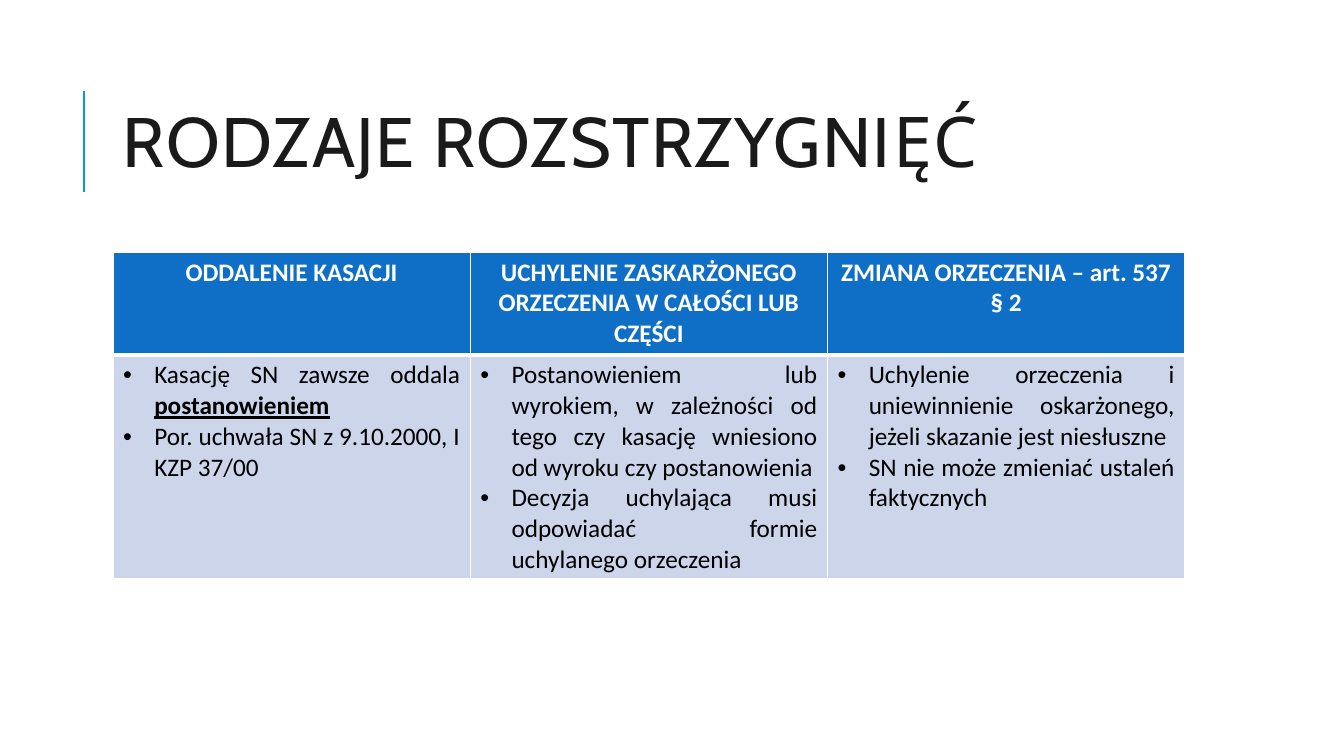
"""Build a slide with a title and a table of the kinds of cassation rulings."""
from pptx import Presentation
from pptx import util as u
from pptx.dml.color import RGBColor
from pptx.enum import shapes, text
from pptx.oxml import parse_xml
from pptx.oxml.ns import nsdecls

TITLE = "RODZAJE ROZSTRZYGNIĘĆ"
COLUMNS = [
    ("ODDALENIE KASACJI",
     [[("Kasację SN zawsze oddala ", False), ("postanowieniem", True)],
      [("Por. uchwała SN z 9.10.2000, I KZP 37/00", False)]]),
    ("UCHYLENIE ZASKARŻONEGO ORZECZENIA W CAŁOŚCI LUB CZĘŚCI",
     [[("Postanowieniem lub wyrokiem, w zależności od tego czy kasację "
        "wniesiono od wyroku czy postanowienia", False)],
      [("Decyzja uchylająca musi odpowiadać formie uchylanego orzeczenia", False)]]),
    ("ZMIANA ORZECZENIA – art. 537 § 2",
     [[("Uchylenie orzeczenia i uniewinnienie oskarżonego, jeżeli skazanie "
        "jest niesłuszne", False)],
      [("SN nie może zmieniać ustaleń faktycznych", False)]]),
]
LEFT, WIDTH = 1.12, 10.63
ROW_HEIGHTS = [1.02, 2.22]
HEADER_BORDERS = {"L": 1, "R": 1, "T": 1, "B": 3}
BODY_BORDERS = {"L": 1, "R": 1, "T": 3, "B": 1}


def color(value):
    return RGBColor.from_string(value)


def add_text(paragraph, content, size=18, font="Calibri", fill="000000",
             bold=False, underline=False, spacing=None):
    run = paragraph.add_run()
    run.text = content
    run.font.size = u.Pt(size)
    run.font.name = font
    run.font.color.rgb = color(fill)
    run.font.bold = bold
    run.font.underline = underline
    if spacing:
        run.font._element.set("spc", str(spacing * 100))


def add_bullet(paragraph):
    properties = paragraph._p.get_or_add_pPr()
    properties.set("marL", str(u.Inches(0.31)))
    properties.set("indent", str(u.Inches(-0.31)))
    properties.append(parse_xml(f'<a:buFont {nsdecls("a")} typeface="Arial"/>'))
    properties.append(parse_xml(f'<a:buChar {nsdecls("a")} char="•"/>'))


def style_cell(cell, fill, borders):
    cell.fill.solid()
    cell.fill.fore_color.rgb = color(fill)
    properties = cell._tc.get_or_add_tcPr()
    for position, (side, width) in enumerate(borders.items()):
        properties.insert(position, parse_xml(
            f'<a:ln{side} {nsdecls("a")} w="{u.Pt(width)}"><a:solidFill>'
            f'<a:srgbClr val="FFFFFF"/></a:solidFill></a:ln{side}>'))


def add_title(slide):
    line = slide.shapes.add_connector(
        shapes.MSO_CONNECTOR.STRAIGHT,
        u.Inches(0.83), u.Inches(1.9), u.Inches(0.83), u.Inches(0.9))
    line.line.color.rgb = color("009DD9")
    line.line.width = u.Pt(1.5)
    line._element.spPr.append(parse_xml(f'<a:effectLst {nsdecls("a")}/>'))

    title = slide.shapes.add_textbox(
        u.Inches(LEFT), u.Inches(0.64), u.Inches(WIDTH), u.Inches(1.64))
    frame = title.text_frame
    frame.word_wrap = True
    frame.vertical_anchor = text.MSO_ANCHOR.MIDDLE
    paragraph = frame.paragraphs[0]
    paragraph.line_spacing = 0.8
    add_text(paragraph, TITLE, size=50, font="Cabin", fill="1A1A1A", spacing=1)


def add_rulings(slide):
    table = slide.shapes.add_table(
        len(ROW_HEIGHTS), len(COLUMNS), u.Inches(LEFT), u.Inches(2.5),
        u.Inches(WIDTH), u.Inches(sum(ROW_HEIGHTS))).table
    for row, height in zip(table.rows, ROW_HEIGHTS):
        row.height = u.Inches(height)
    for index, (heading, points) in enumerate(COLUMNS):
        header, body = table.cell(0, index), table.cell(1, index)
        style_cell(header, "0F6FC6", HEADER_BORDERS)
        style_cell(body, "CCD5EA", BODY_BORDERS)
        paragraph = header.text_frame.paragraphs[0]
        paragraph.alignment = text.PP_ALIGN.CENTER
        add_text(paragraph, heading, fill="FFFFFF", bold=True)
        for number, runs in enumerate(points):
            frame = body.text_frame
            paragraph = frame.add_paragraph() if number else frame.paragraphs[0]
            paragraph.alignment = text.PP_ALIGN.JUSTIFY
            add_bullet(paragraph)
            for content, strong in runs:
                add_text(paragraph, content, bold=strong, underline=strong)


def main():
    presentation = Presentation()
    presentation.slide_width = u.Inches(13.33)
    presentation.slide_height = u.Inches(7.5)
    slide = presentation.slides.add_slide(presentation.slide_layouts[6])
    add_title(slide)
    add_rulings(slide)
    presentation.save("out.pptx")


if __name__ == "__main__":
    main()
